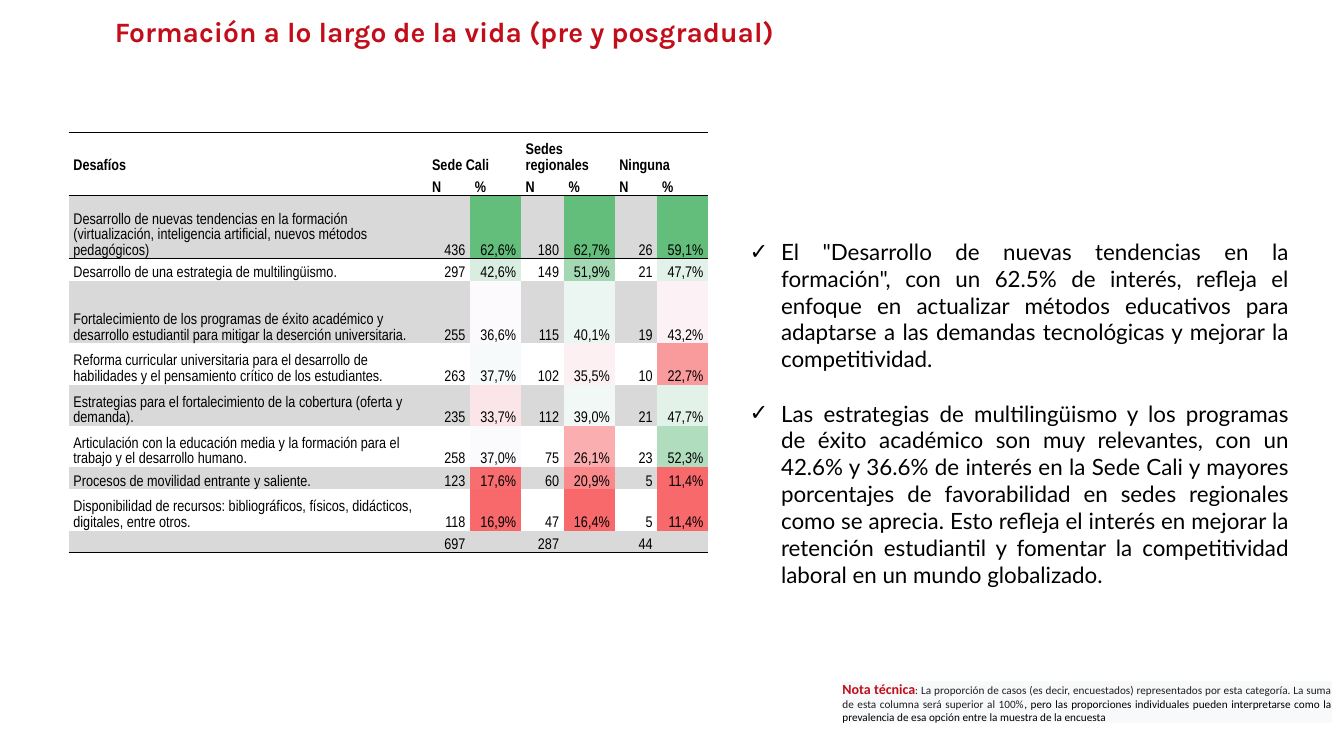
from lxml import etree
from pptx import Presentation
from pptx import util as u
from pptx.dml.color import RGBColor
from pptx.enum import shapes, text
from pptx.oxml import ns

RED, BLACK, GREY = "C20E1A", "000000", "D9D9D9"
LOW, MIDDLE, HIGH = "F8696B", "FCFCFF", "63BE7B"
NO_STYLE = "{2D5ABB26-0587-4C30-8999-92F81FD0307C}"

SITES = ["Sede Cali", "Sedes regionales", "Ninguna"]
TOTALS = [697, 287, 44]
CHALLENGES = [
    ("Desarrollo de nuevas tendencias en la formación (virtualización, inteligencia "
     "artificial, nuevos métodos pedagógicos)", [436, 180, 26]),
    ("Desarrollo de una estrategia de multilingüismo.", [297, 149, 21]),
    ("Fortalecimiento de los programas de éxito académico y desarrollo estudiantil "
     "para mitigar la deserción universitaria.", [255, 115, 19]),
    ("Reforma curricular universitaria para el desarrollo de habilidades y el "
     "pensamiento crítico de los estudiantes.", [263, 102, 10]),
    ("Estrategias para el fortalecimiento de la cobertura (oferta y demanda).",
     [235, 112, 21]),
    ("Articulación con la educación media y la formación para el trabajo y el "
     "desarrollo humano.", [258, 75, 23]),
    ("Procesos de movilidad entrante y saliente.", [123, 60, 5]),
    ("Disponibilidad de recursos: bibliográficos, físicos, didácticos, digitales, "
     "entre otros.", [118, 47, 5]),
]
ROW_HEIGHTS = [1.04, 0.56, 1.58, 0.56, 1.58, 1.04, 1.04, 1.04, 0.56, 1.04, 0.56]
FINDINGS = [
    'El "Desarrollo de nuevas tendencias en la formación", con un 62.5% de interés, '
    "refleja el enfoque en actualizar métodos educativos para adaptarse a las demandas "
    "tecnológicas y mejorar la competitividad.",
    "Las estrategias de multilingüismo y los programas de éxito académico son muy "
    "relevantes, con un 42.6% y 36.6% de interés en la Sede Cali y mayores porcentajes "
    "de favorabilidad en sedes regionales como se aprecia. Esto refleja el interés en "
    "mejorar la retención estudiantil y fomentar la competitividad laboral en un mundo "
    "globalizado.",
]
NOTE = [
    ("Nota técnica", 10, RED, True),
    (": La proporción de casos (es decir, encuestados) representados por esta categoría. "
     "La suma de esta columna será superior al 100%", 8, "1F1F1F", False),
    (", pero las proporciones individuales pueden interpretarse como la prevalencia de "
     "esa opción entre la muestra de la encuesta", 8, BLACK, False),
]


def colour(value):
    return RGBColor.from_string(value)


def blend(start, end, share):
    pairs = zip(colour(start), colour(end))
    return "".join(f"{round(a + (b - a) * share):02X}" for a, b in pairs)


def scale_colour(count, column):
    """Three-colour scale: minimum, median and maximum of a column."""
    ranked = sorted(column)
    half = len(ranked) // 2
    median = (ranked[half - 1] + ranked[half]) / 2
    if count < median:
        return blend(MIDDLE, LOW, (median - count) / (median - ranked[0]))
    return blend(MIDDLE, HIGH, (count - median) / (ranked[-1] - median))


class SlideBuilder:
    def __init__(self, deck):
        self.page = deck.slides.add_slide(deck.slide_layouts[1])

    def place(self, box, left, top, width, height):
        box.left, box.top = u.Cm(left), u.Cm(top)
        box.width, box.height = u.Cm(width), u.Cm(height)
        box.text_frame.word_wrap = True
        box.text_frame.auto_size = text.MSO_AUTO_SIZE.NONE
        box.text_frame.vertical_anchor = text.MSO_ANCHOR.TOP

    def span(self, para, words, font, size, tint=BLACK, bold=False):
        span = para.add_run()
        span.text = words
        span.font.name, span.font.size = font, u.Pt(size)
        span.font.bold = bold
        span.font.color.rgb = colour(tint)

    def title(self, words, *spot):
        box = self.page.shapes.title
        self.place(box, *spot)
        para = box.text_frame.paragraphs[0]
        para.alignment = text.PP_ALIGN.LEFT
        self.span(para, words, "Karla", 20, RED, True)

    def checklist(self, items, *spot):
        box = self.page.placeholders[1]
        self.place(box, *spot)
        for index, words in enumerate(items):
            frame = box.text_frame
            para = frame.add_paragraph() if index else frame.paragraphs[0]
            para.alignment = text.PP_ALIGN.JUSTIFY
            para.space_before = u.Pt(19.5 if index else 0)
            props = para._p.get_or_add_pPr()
            props.set("marL", str(u.Cm(0.79)))
            props.set("indent", str(u.Cm(-0.79)))
            etree.SubElement(props, ns.qn("a:buChar"), char="✓")
            self.span(para, words, "Lato", 16)

    def note(self, parts, *spot):
        box = self.page.shapes.add_shape(shapes.MSO_SHAPE.RECTANGLE, 0, 0, 0, 0)
        self.place(box, *spot)
        box.shadow.inherit = False
        box.fill.solid()
        box.fill.fore_color.rgb = colour("F8F9FA")
        box.line.fill.background()
        frame = box.text_frame
        frame.vertical_anchor = text.MSO_ANCHOR.MIDDLE
        frame.margin_left = frame.margin_right = 0
        frame.margin_top = frame.margin_bottom = 0
        para = frame.paragraphs[0]
        para.alignment = text.PP_ALIGN.JUSTIFY
        for words, size, tint, bold in parts:
            self.span(para, words, "Calibri", size, tint, bold)

    def table(self, left, top, widths, heights):
        table = self.page.shapes.add_table(
            len(heights), len(widths), u.Cm(left), u.Cm(top),
            u.Cm(sum(widths)), u.Cm(sum(heights))).table
        table.first_row = table.horz_banding = False
        table._tbl.tblPr[0].text = NO_STYLE
        for column, width in zip(table.columns, widths):
            column.width = u.Cm(width)
        for row, height in zip(table.rows, heights):
            row.height = u.Cm(height)
        return table

    def cell(self, cell, words, fill=None, bold=False, right=False, edge=None):
        cell.margin_left = cell.margin_right = u.Cm(0.12)
        cell.margin_top = cell.margin_bottom = 0
        cell.vertical_anchor = text.MSO_ANCHOR.BOTTOM
        if edge:
            line = etree.SubElement(cell._tc.get_or_add_tcPr(), ns.qn(edge),
                                    w=str(u.Pt(1)))
            paint = etree.SubElement(line, ns.qn("a:solidFill"))
            etree.SubElement(paint, ns.qn("a:srgbClr"), val=BLACK)
        if fill:
            cell.fill.solid()
            cell.fill.fore_color.rgb = colour(fill)
        else:
            cell.fill.background()
        para = cell.text_frame.paragraphs[0]
        para.alignment = text.PP_ALIGN.RIGHT if right else text.PP_ALIGN.LEFT
        para.line_spacing, para.space_after = 1.07, u.Pt(8)
        if words:
            self.span(para, words, "Arial Narrow", 11, BLACK, bold)
        else:
            etree.SubElement(para._p, ns.qn("a:endParaRPr"), sz="1100")


def fill_table(builder, table):
    # Header rows
    names = ["Desafíos"] + [name for site in SITES for name in (site, "")]
    for row, labels, edge in ((0, names, "a:lnT"), (1, [""] + ["N", "%"] * 3, "a:lnB")):
        for col, label in enumerate(labels):
            builder.cell(table.cell(row, col), label, bold=True, edge=edge)
    for col in (1, 3, 5):
        table.cell(0, col).merge(table.cell(0, col + 1))

    # Challenges, with shares on a colour scale
    columns = list(zip(*(counts for _, counts in CHALLENGES)))
    for index, (challenge, counts) in enumerate(CHALLENGES):
        row, band = index + 2, None if index % 2 else GREY
        edge = None if index else "a:lnT"
        builder.cell(table.cell(row, 0), challenge, band, edge=edge)
        for site, count in enumerate(counts):
            share = f"{count / TOTALS[site]:.1%}".replace(".", ",")
            tint = scale_colour(count, columns[site])
            col = 2 * site + 1
            builder.cell(table.cell(row, col), str(count), band, right=True, edge=edge)
            builder.cell(table.cell(row, col + 1), share, tint, right=True, edge=edge)

    # Totals
    totals = [""] + [words for total in TOTALS for words in (str(total), "")]
    for col, words in enumerate(totals):
        builder.cell(table.cell(len(ROW_HEIGHTS) - 1, col), words, GREY,
                     right=True, edge="a:lnB")


def main():
    deck = Presentation()
    deck.slide_width, deck.slide_height = u.Cm(33.87), u.Cm(19.05)
    builder = SlideBuilder(deck)
    builder.title("Formación a lo largo de la vida (pre y posgradual)",
                  2.64, 0.23, 17.73, 1.12)
    builder.note(NOTE, 21.23, 17.17, 12.34, 1.04)
    builder.checklist(FINDINGS, 18.64, 5.87, 14.1, 9.14)
    table = builder.table(1.73, 3.33, [9.04] + [1.08, 1.28] * 3, ROW_HEIGHTS)
    fill_table(builder, table)
    deck.save("out.pptx")


if __name__ == "__main__":
    main()
